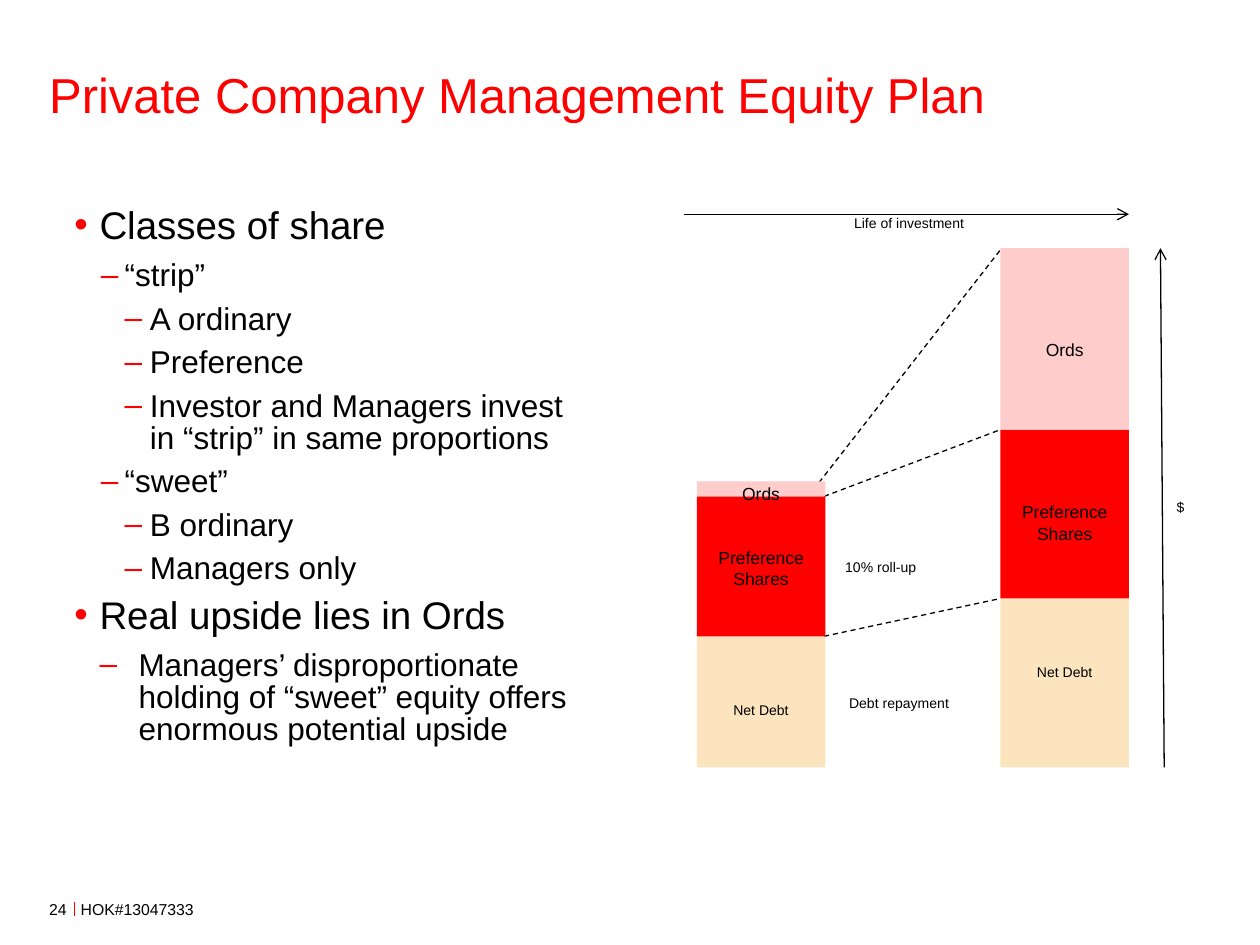
from pptx import Presentation
from pptx.dml.color import RGBColor
from pptx.enum.dml import MSO_LINE
from pptx.enum.shapes import MSO_CONNECTOR, MSO_SHAPE
from pptx.enum.text import MSO_ANCHOR, PP_ALIGN
from pptx.oxml.ns import qn
from pptx.util import Inches, Pt
from lxml.etree import SubElement as Sub

THEME = {
    "font": "Arial", "ink": "000000", "red": "FF0000", "pink": "FFCCCC", "sand": "FBE4BE",
    "title": 28, "head": 22, "body": 18, "bar": 10, "note": 8, "foot": 9,
}

TITLE = "Private Company Management Equity Plan"

# kind: level, indent, hang, bullet, size, space after
KINDS = {
    "head": (2, 0.2, 0.2, "•", "head", 7.9),
    "item": (3, 0.4, 0.19, "–", "body", 6.5),
    "sub": (4, 0.6, 0.2, "–", "body", 6.5),
    "wide": (3, 0.51, 0.31, "–", "body", 6.5),
}
POINTS = [
    ("head", "Classes of share"),
    ("item", "“strip”"),
    ("sub", "A ordinary"),
    ("sub", "Preference"),
    ("sub", "Investor and Managers invest in “strip” in same proportions"),
    ("item", "“sweet”"),
    ("sub", "B ordinary"),
    ("sub", "Managers only"),
    ("head", "Real upside lies in Ords"),
    ("wide", "Managers’ disproportionate holding of “sweet” equity offers enormous potential upside"),
]

BASE, BAR_W = 6.09, 1.02
# Bars stack upwards from BASE: label, height, fill, size, lines, centre of label
BARS = [
    (5.53, [("Net Debt", 1.04, "sand", "note", 1, 5.63),
            ("Preference Shares", 1.11, "red", "bar", 2, 4.5),
            ("Ords", 0.12, "pink", "bar", 1, 3.91)]),
    (7.94, [("Net Debt", 1.34, "sand", "note", 1, 5.33),
            ("Preference Shares", 1.34, "red", "bar", 2, 4.14),
            ("Ords", 1.44, "pink", "bar", 1, 2.77)]),
]
LINKS = [(6.5, 3.83, 7.95, 1.97), (6.54, 3.94, 7.94, 3.41), (6.54, 5.05, 7.94, 4.75)]
AXES = [(5.43, 1.7, 8.96, 1.7), (9.24, 6.09, 9.21, 1.97)]
NOTES = [
    ("10% roll-up", 6.61, 4.38, 0.93),
    ("Debt repayment", 6.64, 5.46, 1.12),
    ("Life of investment", 6.68, 1.65, 1.21),
    ("$", 9.24, 3.91, 0.44),
]
FOOT = [("24", 0.39, 0.2), ("HOK#13047333", 0.64, 5.71)]


def color(name):
    return RGBColor.from_string(THEME[name])


def write(para, text, size, ink="ink"):
    run = para.add_run()
    run.text = text
    run.font.name = THEME["font"]
    run.font.size = Pt(THEME[size])
    run.font.color.rgb = color(ink)


def setup(frame, side, top, anchor=MSO_ANCHOR.TOP):
    """Set wrapping, insets and anchor; return the first paragraph."""
    frame.word_wrap = True
    frame.margin_left = frame.margin_right = Inches(side)
    frame.margin_top = frame.margin_bottom = Inches(top)
    frame.vertical_anchor = anchor
    return frame.paragraphs[0]


def add_box(slide, x, y, w, h):
    return slide.shapes.add_textbox(*map(Inches, (x, y, w, h))).text_frame


def add_line(slide, ends, ink="ink", width=0.75, dash=False, arrow=False):
    line = slide.shapes.add_connector(MSO_CONNECTOR.STRAIGHT, *map(Inches, ends))
    line.line.color.rgb = color(ink)
    line.line.width = Pt(width)
    if dash:
        line.line.dash_style = MSO_LINE.DASH
    props = line._element.spPr
    if arrow:
        Sub(props.find(qn("a:ln")), qn("a:tailEnd"), type="arrow")
    Sub(props, qn("a:effectLst"))


def add_bar(slide, x, parts):
    top = BASE
    for text, high, fill, size, rows, mid in parts:
        top -= high
        bar = slide.shapes.add_shape(
            MSO_SHAPE.RECTANGLE, *map(Inches, (x, top, BAR_W, high)))
        bar.shadow.inherit = False
        bar.fill.solid()
        bar.fill.fore_color.rgb = color(fill)
        bar.line.fill.background()
        half = rows * THEME[size] * 1.15 / 72 / 2
        para = setup(bar.text_frame, 0.1, 0)
        bar.text_frame.margin_top = Inches(max(0, mid - half - top))
        para.alignment = PP_ALIGN.CENTER
        write(para, text, size)


def add_points(slide):
    frame = add_box(slide, 0.39, 1.45, 4.37, 5.16)
    para = setup(frame, 0.2, 0.2)
    for i, (kind, text) in enumerate(POINTS):
        level, left, hang, mark, size, after = KINDS[kind]
        if i:
            para = frame.add_paragraph()
        para.level = level
        para.line_spacing = 0.85
        para.space_after = Pt(after)
        props = para._p.get_or_add_pPr()
        props.set("marL", str(Inches(left)))
        props.set("indent", str(-Inches(hang)))
        Sub(Sub(props, qn("a:buClr")), qn("a:srgbClr"), val=THEME["red"])
        Sub(props, qn("a:buFont"), typeface=THEME["font"])
        Sub(props, qn("a:buChar"), char=mark)
        write(para, text, size)


def main():
    deck = Presentation()
    deck.slide_width, deck.slide_height = Inches(10), Inches(7.5)
    slide = deck.slides.add_slide(deck.slide_layouts[5])

    title = slide.shapes.title
    title.left, title.top, title.width, title.height = map(Inches, (0.39, 0.47, 9.21, 0.55))
    para = setup(title.text_frame, 0, 0, MSO_ANCHOR.MIDDLE)
    para.alignment = PP_ALIGN.LEFT
    write(para, TITLE, "title", "red")

    add_points(slide)
    for ends in LINKS:
        add_line(slide, ends, dash=True)
    for x, parts in BARS:
        add_bar(slide, x, parts)
    for ends in AXES:
        add_line(slide, ends, arrow=True)
    for text, x, y, w in NOTES:
        write(setup(add_box(slide, x, y, w, 0.24), 0.1, 0.05), text, "note")

    add_line(slide, (0.59, 7.16, 0.59, 7.27), "red", 0.5)
    for text, x, w in FOOT:
        write(setup(add_box(slide, x, 7.14, w, 0.2), 0, 0), text, "foot")
    deck.save("out.pptx")


if __name__ == "__main__":
    main()
